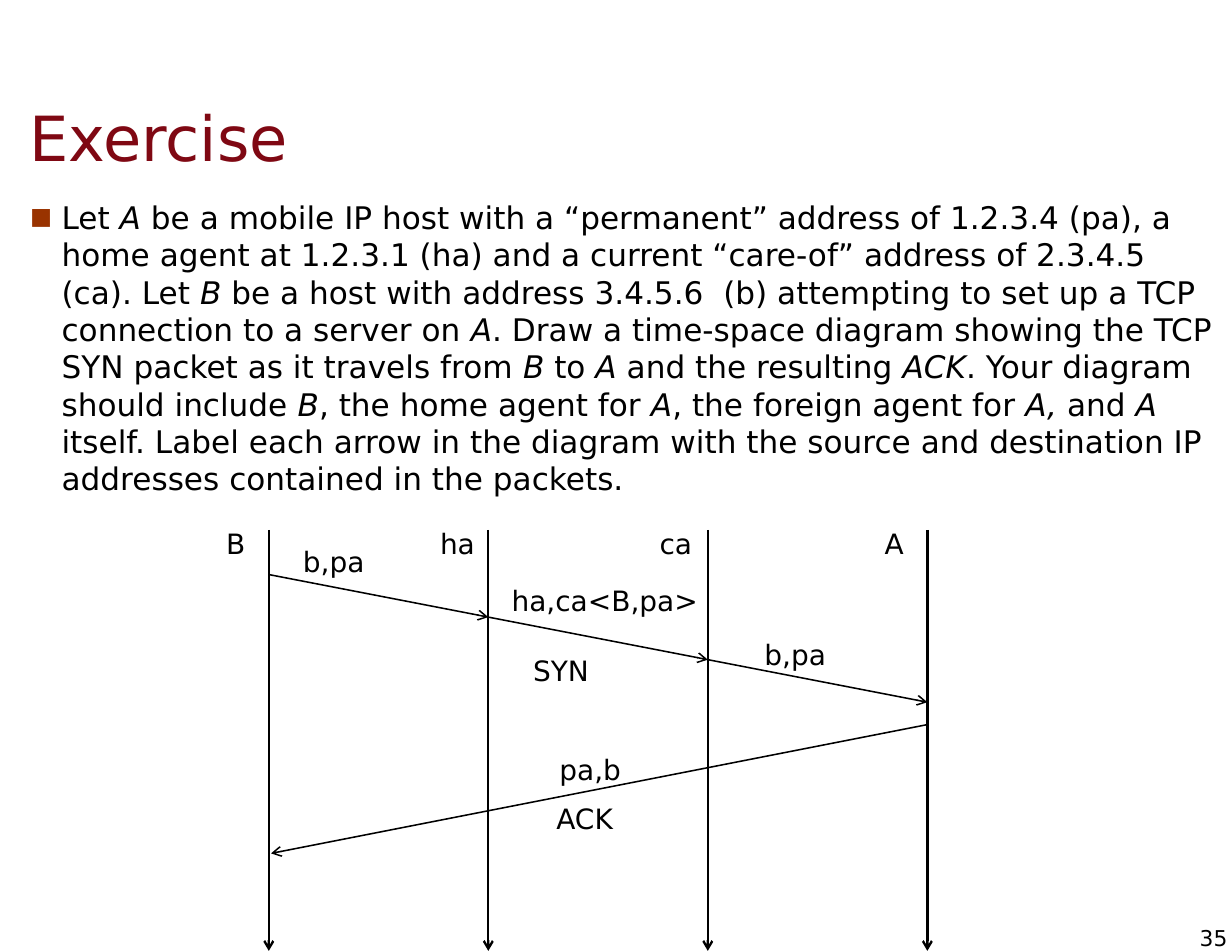
import dataclasses

import lxml.etree
import pptx
import pptx.dml.color
import pptx.enum.shapes
import pptx.enum.text
import pptx.oxml.ns
import pptx.util

Inches = pptx.util.Inches
Pt = pptx.util.Pt
Align = pptx.enum.text.PP_ALIGN
Anchor = pptx.enum.text.MSO_ANCHOR
AutoSize = pptx.enum.text.MSO_AUTO_SIZE
qn = pptx.oxml.ns.qn


@dataclasses.dataclass(frozen=True)
class Theme:
    font: str = "DejaVu Sans"
    title_color: str = "7F0813"
    ink: str = "000000"
    bullet: str = "993300"
    title_size: int = 40
    body_size: int = 20
    label_size: int = 18
    number_size: int = 14
    lifeline_width: float = 1.5
    message_width: float = 1


@dataclasses.dataclass(frozen=True)
class Box:
    left: float
    top: float
    width: float
    height: float

    def inner(self, left, top, width, height):
        return Box(self.left + left, self.top + top, width, height)


THEME = Theme()

# Exercise wording as (text, italic) spans
EXERCISE = [
    ("Let ", False), ("A", True),
    (" be a mobile IP host with a “permanent” address of 1.2.3.4 (pa), "
     "a home agent at 1.2.3.1 (ha) and a current “care-of” address of "
     "2.3.4.5 (ca). Let ", False),
    ("B", True),
    (" be a host with address 3.4.5.6  (b) attempting to set up a TCP "
     "connection to a server on ", False),
    ("A", True),
    (". Draw a time-space diagram showing the TCP SYN packet as it travels "
     "from ", False),
    ("B", True), (" to ", False), ("A", True),
    (" and the resulting ", False), ("ACK", True),
    (". Your diagram should include ", False), ("B", True),
    (", the home agent for ", False), ("A", True),
    (", the foreign agent for ", False), ("A,", True),
    (" and ", False), ("A ", True),
    ("itself. Label each arrow in the diagram with the source and "
     "destination IP addresses contained in the packets.", False),
]


def place(shape, box):
    shape.left, shape.top = Inches(box.left), Inches(box.top)
    shape.width, shape.height = Inches(box.width), Inches(box.height)


def set_frame(frame, anchor, side=0.1, edge=0.05, wrap=True):
    frame.auto_size = AutoSize.NONE
    frame.word_wrap = wrap
    frame.vertical_anchor = anchor
    frame.margin_left = frame.margin_right = Inches(side)
    frame.margin_top = frame.margin_bottom = Inches(edge)


def add_span(para, text, size, color=THEME.ink, italic=False):
    span = para.add_run()
    span.text = text
    span.font.name = THEME.font
    span.font.size = Pt(size)
    span.font.italic = italic
    span.font.color.rgb = pptx.dml.color.RGBColor.from_string(color)


def set_bullet(para, char, color, percent):
    props = para._p.get_or_add_pPr()
    props.set("marL", str(Inches(0.42)))
    props.set("indent", str(Inches(-0.28)))
    fill = lxml.etree.SubElement(props, qn("a:buClr"))
    lxml.etree.SubElement(fill, qn("a:srgbClr"), val=color)
    lxml.etree.SubElement(props, qn("a:buSzPct"), val=str(percent * 1000))
    lxml.etree.SubElement(props, qn("a:buFont"), typeface=THEME.font)
    lxml.etree.SubElement(props, qn("a:buChar"), char=char)


def add_label(page, box, text, size=THEME.label_size, align=Align.CENTER):
    shape = page.shapes.add_textbox(0, 0, 0, 0)
    place(shape, box)
    set_frame(shape.text_frame, Anchor.TOP)
    para = shape.text_frame.paragraphs[0]
    para.alignment = align
    add_span(para, text, size)
    return shape


def add_arrow(page, box, start, end, width):
    """Draw an arrow between two points given relative to the box."""
    points = [Inches(value) for x, y in (start, end)
              for value in (box.left + x, box.top + y)]
    arrow = page.shapes.add_connector(
        pptx.enum.shapes.MSO_CONNECTOR.STRAIGHT, *points)
    arrow.line.width = Pt(width)
    arrow.line.color.rgb = pptx.dml.color.RGBColor.from_string(THEME.ink)
    lxml.etree.SubElement(arrow.line._get_or_add_ln(), qn("a:tailEnd"),
                          type="arrow")
    lxml.etree.SubElement(arrow._element.spPr, qn("a:effectLst"))


def add_title(page, box):
    title = page.shapes.title
    place(title, box)
    set_frame(title.text_frame, Anchor.MIDDLE, 0.11, 0.06)
    para = title.text_frame.paragraphs[0]
    para.alignment = Align.LEFT
    add_span(para, "Exercise", THEME.title_size, THEME.title_color)


def add_exercise(page, box):
    body = page.placeholders[1]
    place(body, box)
    set_frame(body.text_frame, Anchor.TOP, 0.11, 0.06)
    para = body.text_frame.paragraphs[0]
    set_bullet(para, "■", THEME.bullet, 75)
    para.space_before = Pt(0)
    para.line_spacing = Pt(24)
    for text, italic in EXERCISE:
        add_span(para, text, THEME.body_size, italic=italic)


def add_diagram(page, box):
    # Lifelines, evenly spaced over the box
    names = ["B", "ha", "ca", "A"]
    step = box.width / (len(names) - 1)
    lifelines = [index * step for index in range(len(names))]
    for x in lifelines:
        add_arrow(page, box, (x, 0), (x, box.height), THEME.lifeline_width)
    for name, x, shift in zip(names, lifelines, (0.29, 0.27, 0.28, 0.29)):
        add_label(page, box.inner(x - shift - 0.32, -0.08, 0.63, 0.4), name)

    # SYN hops, one per gap, then the direct ACK
    drop = 0.38
    for index, x in enumerate(lifelines[:-1]):
        y = 0.4 + index * drop
        add_arrow(page, box, (x, y), (x + step, y + drop),
                  THEME.message_width)
    add_arrow(page, box, (box.width, 1.74), (0.02, 2.89),
              THEME.message_width)

    # Packet labels: text, left, top, width
    for text, left, top, width in [
        ("b,pa", 0.13, 0.08, 0.9),
        ("ha,ca<B,pa>", 2.05, 0.43, 1.9),
        ("b,pa", 4.25, 0.91, 0.9),
        ("SYN", 2.14, 1.06, 0.94),
        ("pa,b", 2.42, 1.94, 0.9),
        ("ACK", 2.35, 2.38, 0.94),
    ]:
        add_label(page, box.inner(left, top, width, 0.4), text)


def add_page_number(page, box):
    number = add_label(page, box, "35", THEME.number_size, Align.RIGHT)
    set_frame(number.text_frame, Anchor.MIDDLE, 0, 0, wrap=False)


def main():
    deck = pptx.Presentation()
    deck.slide_width, deck.slide_height = Inches(11), Inches(8.5)
    page = deck.slides.add_slide(deck.slide_layouts[1])
    add_title(page, Box(0.15, 0.7, 10.53, 1.04))
    add_exercise(page, Box(0.02, 1.71, 10.98, 6.33))
    add_page_number(page, Box(10.62, 8.25, 0.34, 0.24))
    add_diagram(page, Box(2.4, 4.73, 5.88, 3.76))
    deck.save("out.pptx")


if __name__ == "__main__":
    main()
